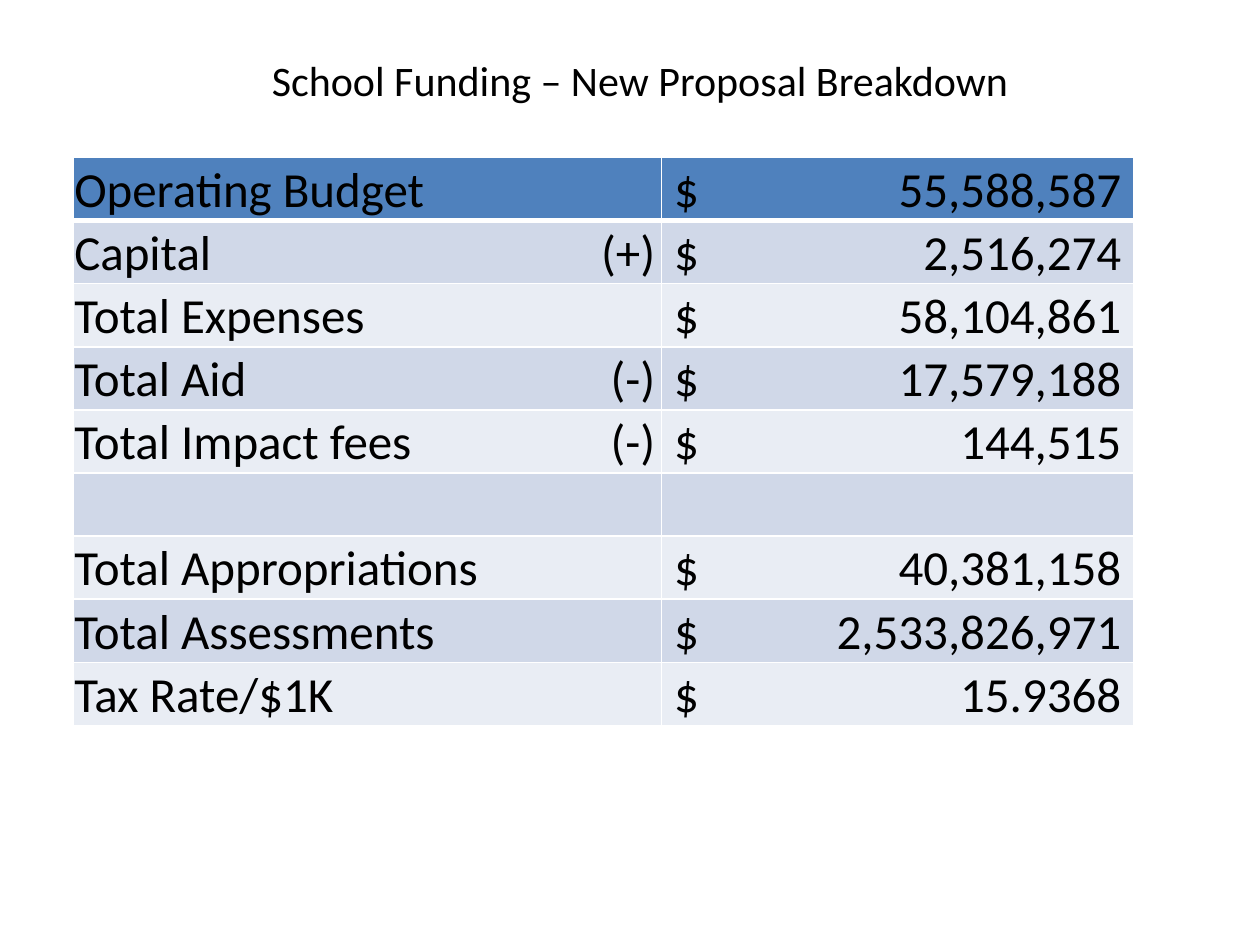
from lxml import etree
from pptx import Presentation
from pptx.dml.color import RGBColor
from pptx.enum.text import MSO_ANCHOR, PP_ALIGN
from pptx.oxml.ns import qn
from pptx.util import Inches, Pt

MIDDLE, BOTTOM = MSO_ANCHOR.MIDDLE, MSO_ANCHOR.BOTTOM
CENTER = PP_ALIGN.CENTER

FONT = "Calibri"
BLACK, WHITE = "000000", "FFFFFF"
HEADER_FILL = "4F81BD"
BAND_FILLS = ("E9EDF4", "D0D8E8")

# Label, sign, amount
BUDGET_ROWS = [
    ("Operating Budget", "", "55,588,587"),
    ("Capital", "(+)", "2,516,274"),
    ("Total Expenses", "", "58,104,861"),
    ("Total Aid", "(-)", "17,579,188"),
    ("Total Impact fees", "(-)", "144,515"),
    ("", "", ""),
    ("Total Appropriations", "", "40,381,158"),
    ("Total Assessments", "", "2,533,826,971"),
    ("Tax Rate/$1K", "", "15.9368"),
]
COLUMN_WIDTHS = (Inches(4.67), Inches(3.75))
LEFT_MARGINS = (Inches(0.01), Inches(0.1))
TAB_POSITIONS = (Inches(4.61), Inches(3.55))


def color(hex_string):
    return RGBColor.from_string(hex_string)


def format_runs(paragraph, size):
    for run in paragraph.runs:
        run.font.name = FONT
        run.font.size = Pt(size)
        run.font.bold = False
        run.font.color.rgb = color(BLACK)


def add_right_tab(paragraph, position):
    properties = paragraph._p.get_or_add_pPr()
    tab_list = etree.SubElement(properties, qn("a:tabLst"))
    etree.SubElement(tab_list, qn("a:tab"), pos=str(position), algn="r")


def set_borders(cell, bottom_width):
    properties = cell._tc.get_or_add_tcPr()
    widths = {"a:lnL": 1, "a:lnR": 1, "a:lnT": 1, "a:lnB": bottom_width}
    for tag, width in widths.items():
        line = etree.SubElement(properties, qn(tag), w=str(Pt(width)))
        fill = etree.SubElement(line, qn("a:solidFill"))
        etree.SubElement(fill, qn("a:srgbClr"), val=WHITE)


def format_title(title, left, top, width, height):
    title.left, title.top, title.width, title.height = left, top, width, height
    text_frame = title.text_frame
    text_frame.text = "School Funding – New Proposal Breakdown"
    text_frame.vertical_anchor = MIDDLE
    paragraph = text_frame.paragraphs[0]
    paragraph.alignment = CENTER
    format_runs(paragraph, 24)


def fill_cell(cell, text, column_index, fill, bottom_width):
    cell.margin_left = LEFT_MARGINS[column_index]
    cell.margin_top = cell.margin_right = Inches(0.01)
    cell.margin_bottom = 0
    cell.vertical_anchor = BOTTOM
    set_borders(cell, bottom_width)
    cell.fill.solid()
    cell.fill.fore_color.rgb = color(fill)
    paragraph = cell.text_frame.paragraphs[0]
    if "\t" in text:
        add_right_tab(paragraph, TAB_POSITIONS[column_index])
    paragraph.text = text
    format_runs(paragraph, 28)


def add_budget_table(slide, left, top, width, height):
    table = slide.shapes.add_table(
        len(BUDGET_ROWS), len(COLUMN_WIDTHS), left, top, width, height).table
    for column, column_width in zip(table.columns, COLUMN_WIDTHS):
        column.width = column_width
    for row_index, (label, sign, amount) in enumerate(BUDGET_ROWS):
        is_header = row_index == 0
        fill = HEADER_FILL if is_header else BAND_FILLS[row_index % 2]
        texts = (f"{label}\t{sign}" if sign else label,
                 f"$\t{amount}" if amount else "")
        for column_index, text in enumerate(texts):
            fill_cell(table.cell(row_index, column_index), text, column_index,
                      fill, 3 if is_header else 1)


def main():
    presentation = Presentation()
    presentation.slide_width, presentation.slide_height = Inches(10), Inches(7.5)
    slide = presentation.slides.add_slide(presentation.slide_layouts[0])
    subtitle = slide.placeholders[1].element
    subtitle.getparent().remove(subtitle)
    format_title(slide.shapes.title,
                 Inches(0.83), Inches(0.25), Inches(8.5), Inches(0.77))
    add_budget_table(slide, Inches(0.58), Inches(1.25), Inches(8.42), Inches(4.51))
    presentation.save("out.pptx")


if __name__ == "__main__":
    main()
